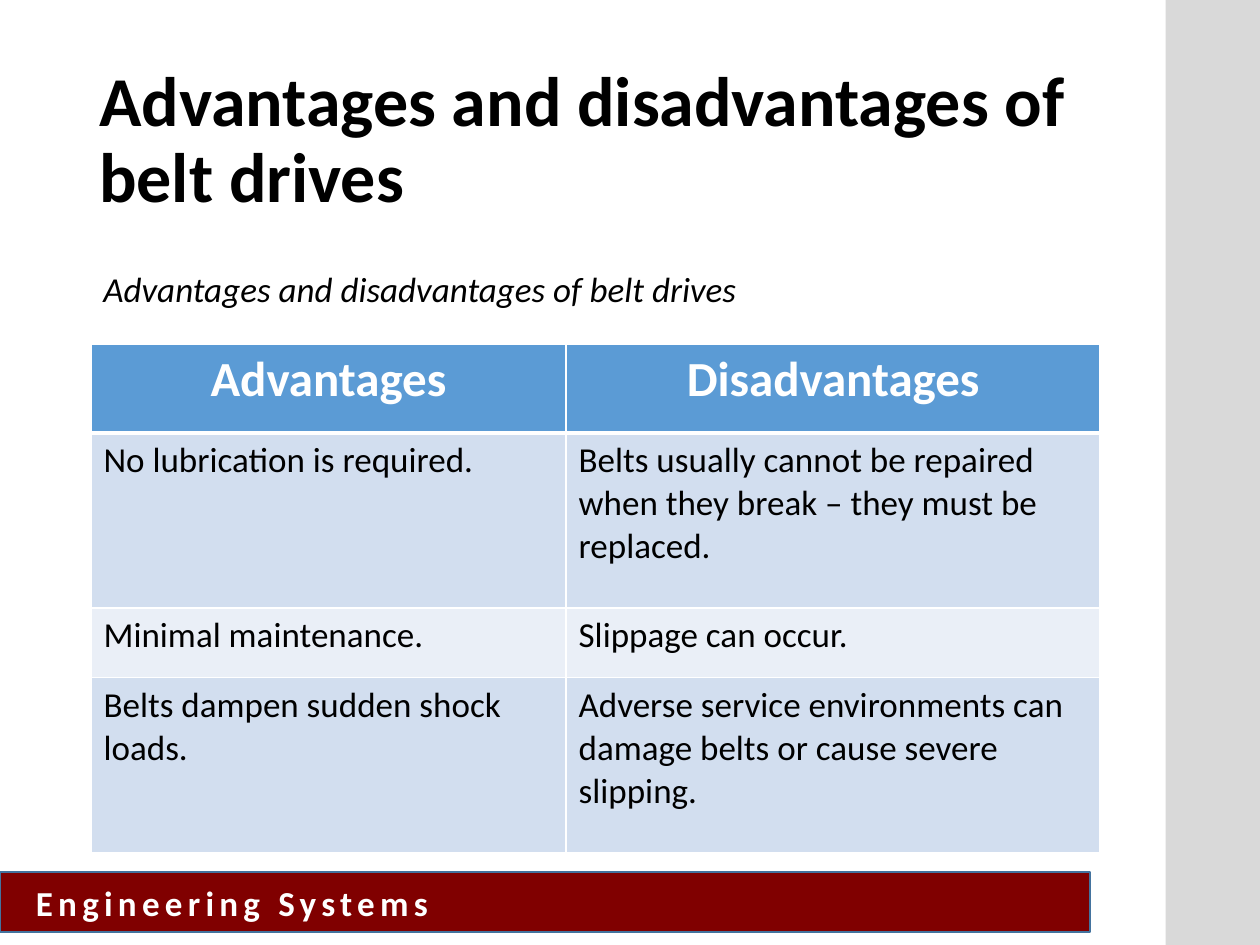
from dataclasses import dataclass

from lxml.etree import SubElement
from pptx import Presentation
from pptx.dml.color import RGBColor
from pptx.enum.shapes import MSO_SHAPE as Shape
from pptx.enum.text import MSO_ANCHOR as Anchor, MSO_AUTO_SIZE as AutoSize, PP_ALIGN as Align
from pptx.oxml.ns import qn
from pptx.util import Pt

COLORS = {
    "white": "FFFFFF", "black": "000000", "maroon": "800000", "outline": "43739E",
    "gray": "D9D9D9", "header": "5B9BD5", "band": "D2DEEF", "light": "EAEFF7",
}
FONT = "Calibri"
TITLE = "Advantages and disadvantages of belt drives"
COLUMN_WIDTHS = (271.5, 305.25)
ROW_HEIGHTS = (51, 100, 39.75, 100)
ROWS = (
    ("Advantages", "Disadvantages"),
    ("No lubrication is required.",
     "Belts usually cannot be repaired when they break – they must be replaced."),
    ("Minimal maintenance.", "Slippage can occur."),
    ("Belts dampen sudden shock loads.",
     "Adverse service environments can damage belts or cause severe slipping."),
)


@dataclass(frozen=True)
class Box:
    left: float
    top: float
    width: float
    height: float

    def lengths(self) -> tuple:
        return Pt(self.left), Pt(self.top), Pt(self.width), Pt(self.height)


@dataclass(frozen=True)
class Style:
    size: float
    color: str = "black"
    bold: bool = False
    italic: bool = False


@dataclass(frozen=True)
class Bar:
    box: Box
    fill: str
    line: str | None = None


FOOTER = Bar(Box(0, 498.25, 622.8, 34.55), "maroon", "outline")
SIDE = Bar(Box(666, 0, 54, 540), "gray")


def rgb(name: str) -> RGBColor:
    return RGBColor.from_string(COLORS[name])


def add_run(p, text: str, style: Style):
    r = p.add_run()
    r.text = text
    r.font.name = FONT
    r.font.size = Pt(style.size)
    r.font.bold = style.bold
    r.font.italic = style.italic
    r.font.color.rgb = rgb(style.color)
    return r


def add_bar(s, bar: Bar):
    sp = s.shapes.add_shape(Shape.RECTANGLE, *bar.box.lengths())
    sp.shadow.inherit = False
    sp.fill.solid()
    sp.fill.fore_color.rgb = rgb(bar.fill)
    if bar.line:
        sp.line.color.rgb = rgb(bar.line)
        sp.line.width = Pt(1)
    else:
        sp.line.fill.background()
    return sp


def set_borders(cell, bottom: float) -> None:
    """Draw white borders; they must precede the cell's fill."""
    tc_pr = cell._tc.get_or_add_tcPr()
    for side, width in (("L", 1), ("R", 1), ("T", 1), ("B", bottom)):
        ln = SubElement(tc_pr, qn(f"a:ln{side}"), w=str(Pt(width)))
        SubElement(SubElement(ln, qn("a:solidFill")), qn("a:srgbClr"), val=COLORS["white"])


def add_comparison(s, box: Box) -> None:
    table = s.shapes.add_table(len(ROWS), len(COLUMN_WIDTHS), *box.lengths()).table
    for column, width in zip(table.columns, COLUMN_WIDTHS):
        column.width = Pt(width)
    for i, (texts, height) in enumerate(zip(ROWS, ROW_HEIGHTS)):
        table.rows[i].height = Pt(height)
        is_header = i == 0
        style = Style(28, "white", bold=True) if is_header else Style(20)
        fill = "header" if is_header else ("light", "band")[i % 2]
        for j, text in enumerate(texts):
            cell = table.cell(i, j)
            set_borders(cell, 3 if is_header else 1)
            if i == 1:
                cell._tc.tcPr.find(qn("a:lnT")).set("w", str(Pt(3)))
            cell.fill.solid()
            cell.fill.fore_color.rgb = rgb(fill)
            p = cell.text_frame.paragraphs[0]
            p.alignment = Align.CENTER if is_header else Align.LEFT
            add_run(p, text, style)


def add_title(s, box: Box) -> None:
    sp = s.shapes.title
    sp.left, sp.top, sp.width, sp.height = box.lengths()
    tf = sp.text_frame
    tf.word_wrap = True
    tf.auto_size = AutoSize.NONE
    tf.vertical_anchor = Anchor.MIDDLE
    p = tf.paragraphs[0]
    p.alignment = Align.LEFT
    p.line_spacing = 0.9
    add_run(p, TITLE, Style(40, bold=True))


def add_caption(s, box: Box) -> None:
    tf = s.shapes.add_textbox(*box.lengths()).text_frame
    tf.word_wrap = True
    tf.auto_size = AutoSize.SHAPE_TO_FIT_TEXT
    add_run(tf.paragraphs[0], TITLE, Style(20, italic=True))


def add_footer(s) -> None:
    tf = add_bar(s, FOOTER).text_frame
    tf.word_wrap = True
    tf.vertical_anchor = Anchor.MIDDLE
    tf.margin_left = Pt(20.5)
    p = tf.paragraphs[0]
    p.alignment = Align.LEFT
    r = add_run(p, "Engineering Systems", Style(20, "white", bold=True))
    r.font._element.set("spc", "300")


def main() -> None:
    prs = Presentation()
    prs.slide_width, prs.slide_height = Pt(720), Pt(540)
    s = prs.slides.add_slide(prs.slide_layouts[5])
    s.background.fill.solid()
    s.background.fill.fore_color.rgb = rgb("white")
    add_footer(s)
    add_bar(s, SIDE)
    add_title(s, Box(49.5, 28.75, 607.5, 104.4))
    add_comparison(s, Box(52, 196.5, sum(COLUMN_WIDTHS), sum(ROW_HEIGHTS)))
    add_caption(s, Box(52, 149.25, 564, 31.5))
    prs.save("out.pptx")


if __name__ == "__main__":
    main()
